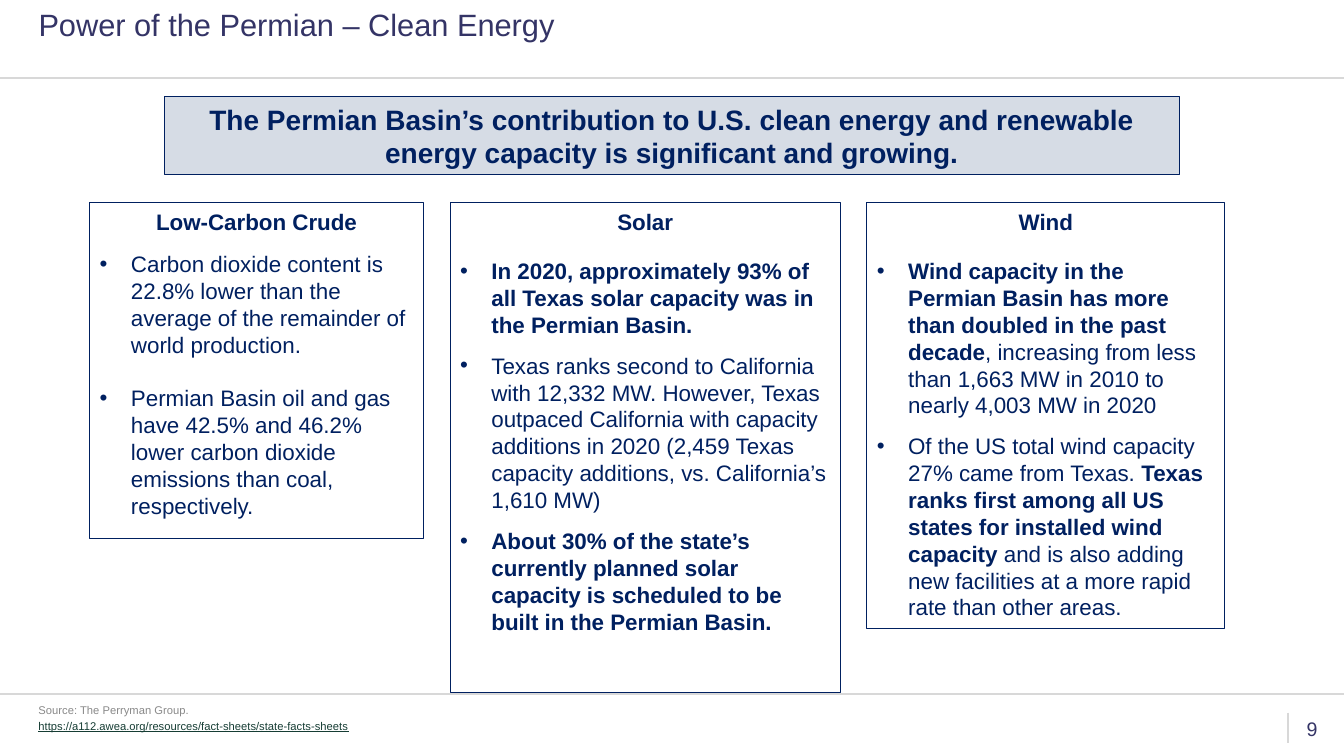
from dataclasses import dataclass

from lxml import etree
from pptx import Presentation
from pptx.dml.color import RGBColor
from pptx.enum.text import MSO_ANCHOR, MSO_AUTO_SIZE, PP_ALIGN
from pptx.enum.shapes import MSO_CONNECTOR
from pptx.oxml.ns import qn
from pptx.util import Cm, Pt

LEFT, CENTER = PP_ALIGN.LEFT, PP_ALIGN.CENTER
TOP, MIDDLE = MSO_ANCHOR.TOP, MSO_ANCHOR.MIDDLE
NO_AUTOFIT = MSO_AUTO_SIZE.NONE
STRAIGHT = MSO_CONNECTOR.STRAIGHT


@dataclass(frozen=True)
class Theme:
    font: str = "Arial"
    heading: str = "343466"
    navy: str = "002060"
    banner: str = "D6DCE5"
    rule: str = "D8D8D8"
    source: str = "898989"
    link: str = "163D34"
    title_size: int = 22
    banner_size: int = 20
    body_size: int = 16
    number_size: int = 14
    source_size: int = 8


THEME = Theme()
COMPARISON_LAYOUT = 4
SLIDE_WIDTH, SLIDE_HEIGHT = 33.86, 19.05
TOP_RULE, BOTTOM_RULE = 1.96, 17.48
COLUMNS_LEFT, COLUMNS_TOP, COLUMN_GAP = 2.26, 5.11, 0.67
BULLET_INDENT = 0.79

# Each column: heading, width, height, bullets as (space before, runs of (text, bold))
COLUMNS = [
    ("Low-Carbon Crude", 8.41, 8.46, [
        (11, [("Carbon dioxide content is 22.8% lower than the average of the "
               "remainder of world production.", False)]),
        (19, [("Permian Basin oil and gas have 42.5% and 46.2% lower carbon dioxide "
               "emissions than coal, respectively.", False)]),
    ]),
    ("Solar", 9.83, 12.34, [
        (16, [("In 2020, approximately 93% of all Texas solar capacity was in the "
               "Permian Basin.", True)]),
        (10, [("Texas ranks second to California with 12,332 MW. However, Texas outpaced "
               "California with capacity additions in 2020 (2,459 Texas capacity "
               "additions, vs. California’s 1,610 MW)", False)]),
        (10, [("About 30% of the state’s currently planned solar capacity is scheduled "
               "to be built in the Permian Basin.", True)]),
    ]),
    ("Wind", 9.02, 10.74, [
        (16, [("Wind capacity in the Permian Basin has more than doubled in the past "
               "decade", True),
              (", increasing from less than 1,663 MW in 2010 to nearly 4,003 MW in 2020",
               False)]),
        (10, [("Of the US total wind capacity 27% came from Texas. ", False),
              ("Texas ranks first among all US states for installed wind capacity ", True),
              ("and is also adding new facilities at a more rapid rate than other areas.",
               False)]),
    ]),
]


def place(shape, left, top, width, height, anchor=TOP, insets=(0.25, 0.13, 0.25, 0.13)):
    shape.left, shape.top = Cm(left), Cm(top)
    shape.width, shape.height = Cm(width), Cm(height)
    frame = shape.text_frame
    frame.word_wrap = True
    frame.auto_size = NO_AUTOFIT
    frame.vertical_anchor = anchor
    (frame.margin_left, frame.margin_top,
     frame.margin_right, frame.margin_bottom) = map(Cm, insets)
    return frame


def outline(shape):
    shape.shadow.inherit = False
    shape.fill.background()
    shape.line.color.rgb = RGBColor.from_string(THEME.navy)
    shape.line.width = Pt(0.75)


def set_bullet(paragraph, bullet):
    properties = paragraph._p.get_or_add_pPr()
    indent = Cm(BULLET_INDENT) if bullet else 0
    properties.set("marL", str(indent))
    properties.set("indent", str(-indent))
    if bullet:
        etree.SubElement(properties, qn("a:buFont"), typeface=THEME.font)
        etree.SubElement(properties, qn("a:buChar"), char="•")
    else:
        etree.SubElement(properties, qn("a:buNone"))


def write(frame, runs, *, size, color, first=False, bold=False, underline=False,
          align=LEFT, before=0, bullet=False):
    """Write one paragraph; runs is a string or a list of (text, bold)."""
    paragraph = frame.paragraphs[0] if first else frame.add_paragraph()
    set_bullet(paragraph, bullet)
    paragraph.alignment = align
    paragraph.line_spacing = 1.0
    paragraph.space_before, paragraph.space_after = Pt(before), Pt(0)
    for text, run_bold in [(runs, bold)] if isinstance(runs, str) else runs:
        run = paragraph.add_run()
        run.text = text
        font = run.font
        font.name, font.size = THEME.font, Pt(size)
        font.bold, font.underline = run_bold, underline
        font.color.rgb = RGBColor.from_string(color)


def add_rule(slide, x1, y1, x2, y2):
    rule = slide.shapes.add_connector(STRAIGHT, Cm(x1), Cm(y1), Cm(x2), Cm(y2))
    rule.line.color.rgb = RGBColor.from_string(THEME.rule)
    rule.line.width = Pt(1.25)
    etree.SubElement(rule._element.spPr, qn("a:effectLst"))
    # Rules lie behind the text boxes
    slide.shapes._spTree.insert(2, rule._element)


def fill_title(shape, left, top, width, height):
    frame = place(shape, left, top, width, height, MIDDLE, (0, 0.13, 0, 0.13))
    write(frame, "Power of the Permian – Clean Energy", first=True,
          size=THEME.title_size, color=THEME.heading)


def fill_banner(shape, left, top, width, height):
    frame = place(shape, left, top, width, height)
    outline(shape)
    shape.fill.solid()
    shape.fill.fore_color.rgb = RGBColor.from_string(THEME.banner)
    write(frame, "The Permian Basin’s contribution to U.S. clean energy and renewable "
          "energy capacity is significant and growing.", first=True, bold=True,
          align=CENTER, size=THEME.banner_size, color=THEME.navy)


def fill_column(shape, left, top, width, height, heading, bullets):
    frame = place(shape, left, top, width, height)
    outline(shape)
    style = {"size": THEME.body_size, "color": THEME.navy}
    write(frame, heading, first=True, bold=True, align=CENTER, **style)
    for before, runs in bullets:
        write(frame, runs, before=before, bullet=True, **style)


def add_footer(slide, left, top, width, height):
    # Sources
    box = slide.shapes.add_textbox(0, 0, 0, 0)
    frame = place(box, left, top, width, height, insets=(0, 0.25, 0, 0.13))
    write(frame, "Source: The Perryman Group.", first=True,
          size=THEME.source_size, color=THEME.source)
    write(frame, "https://a112.awea.org/resources/fact-sheets/state-facts-sheets",
          before=1.6, underline=True, size=THEME.source_size, color=THEME.link)
    # Page number
    number_left = left + width + 2.36
    box = slide.shapes.add_textbox(0, 0, 0, 0)
    frame = place(box, number_left, top + 0.58, 0.74, 0.61, MIDDLE, (0, 0, 0, 0))
    write(frame, "9", first=True, size=THEME.number_size, color=THEME.heading)
    divider = number_left - 0.48
    add_rule(slide, divider, top + 0.48, divider, top + 1.24)


def build_slide(presentation):
    slide = presentation.slides.add_slide(presentation.slide_layouts[COMPARISON_LAYOUT])
    title, *column_shapes, banner = slide.placeholders

    # Heading area
    fill_title(title, 0.97, 0, 31.95, 1.24)
    fill_banner(banner, 4.14, 2.44, 25.58, 1.96)

    # Three columns
    left = COLUMNS_LEFT
    for shape, (heading, width, height, bullets) in zip(column_shapes, COLUMNS):
        fill_column(shape, left, COLUMNS_TOP, width, height, heading, bullets)
        left += width + COLUMN_GAP

    # Rules and footer
    for y in (TOP_RULE, BOTTOM_RULE):
        add_rule(slide, 0, y, SLIDE_WIDTH, y)
    add_footer(slide, 0.97, BOTTOM_RULE, 29.59, SLIDE_HEIGHT - BOTTOM_RULE)


def main():
    presentation = Presentation()
    presentation.slide_width = Cm(SLIDE_WIDTH)
    presentation.slide_height = Cm(SLIDE_HEIGHT)
    build_slide(presentation)
    presentation.save("out.pptx")


if __name__ == "__main__":
    main()
